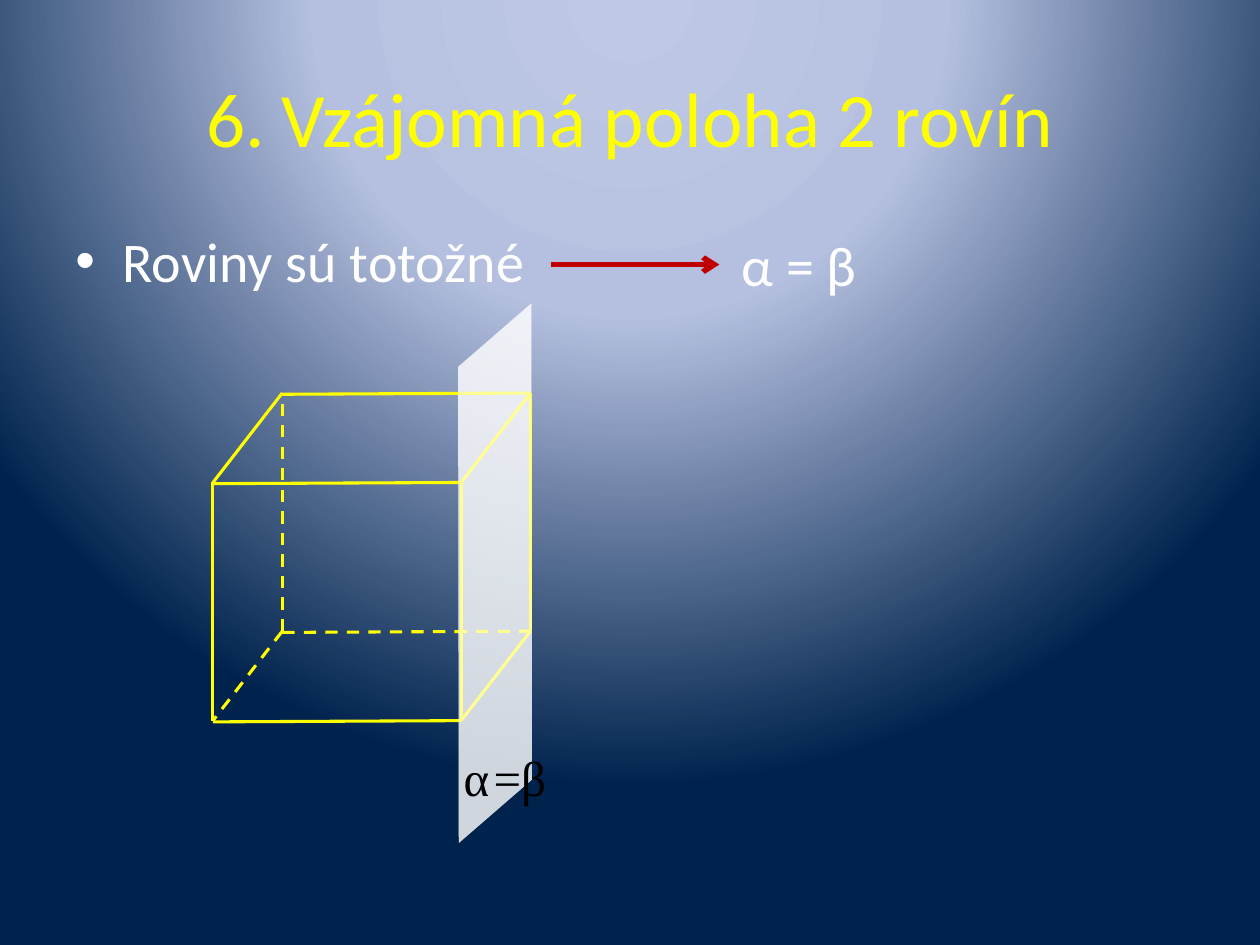
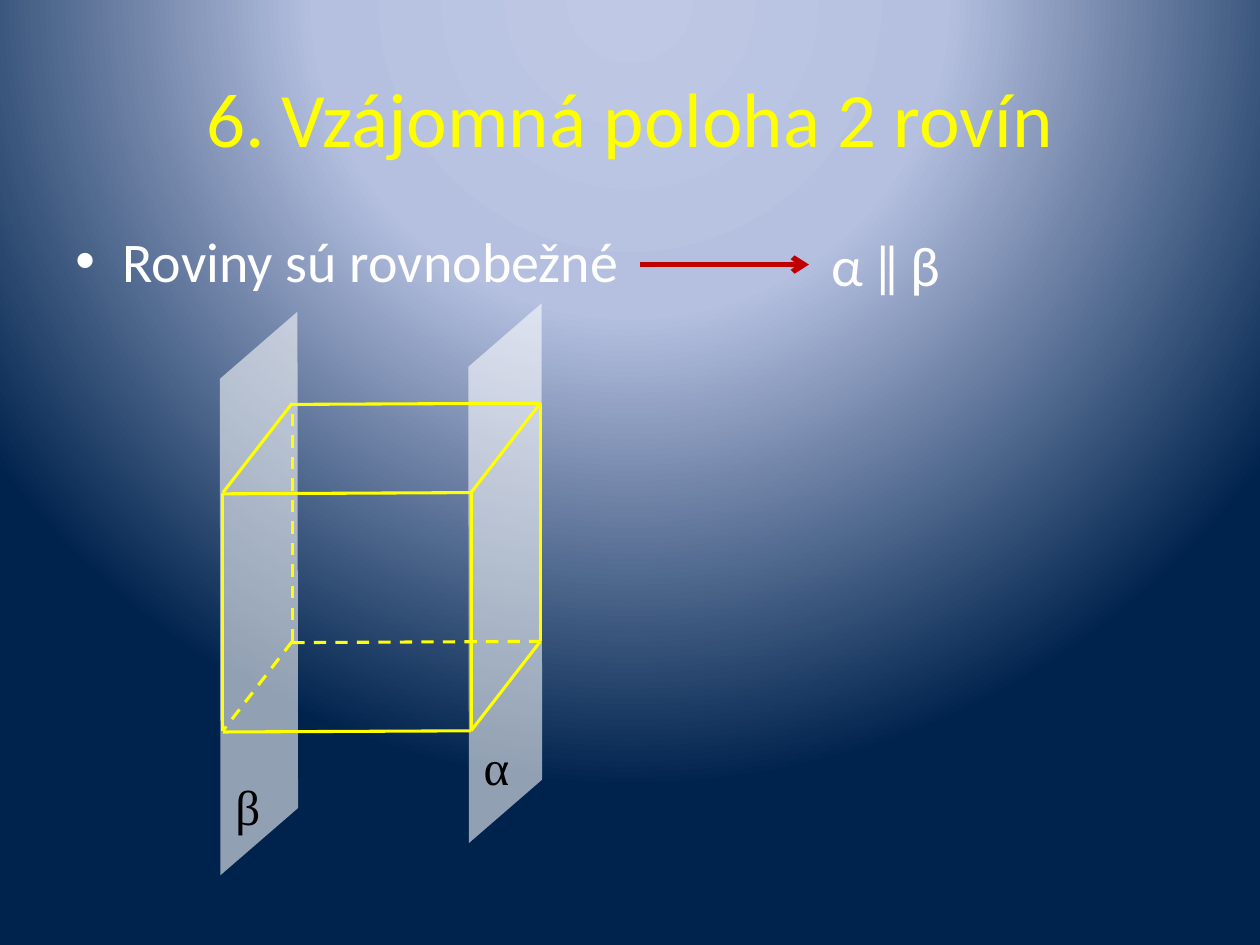
from lxml import etree
from pptx import Presentation
from pptx.dml.color import RGBColor
from pptx.enum import dml, shapes, text as t
from pptx.oxml.ns import qn
from pptx.util import Pt

YELLOW, WHITE, RED, BLACK = "FFFF00", "FFFFFF", "C00000", "000000"
rgb = RGBColor.from_string


def text(s, words, box, size=32, font="Calibri", color=WHITE, align=t.PP_ALIGN.LEFT,
         anchor=t.MSO_ANCHOR.TOP, wrap=True, bullet=False):
    tf = s.shapes.add_textbox(*map(Pt, box)).text_frame
    tf.word_wrap = wrap
    tf.vertical_anchor = anchor
    p = tf.paragraphs[0]
    p.alignment = align
    r = p.add_run()
    r.text = words
    r.font.size = Pt(size)
    r.font.name = font
    r.font.color.rgb = rgb(color)
    if bullet:
        pPr = p._p.get_or_add_pPr()
        pPr.set("marL", str(Pt(27)))
        pPr.set("indent", str(-Pt(27)))
        etree.SubElement(pPr, qn("a:buFont"), typeface="Arial")
        etree.SubElement(pPr, qn("a:buChar"), char="•")


def line(parent, start, end, color, width, dashed=False, arrow=False):
    c = parent.add_connector(shapes.MSO_CONNECTOR.STRAIGHT, *map(Pt, (*start, *end)))
    c.line.color.rgb = rgb(color)
    c.line.width = Pt(width)
    if dashed:
        c.line.dash_style = dml.MSO_LINE.DASH
    if arrow:
        etree.SubElement(next(c.element.iter(qn("a:ln"))), qn("a:tailEnd"), type="arrow")
    etree.SubElement(c.element.spPr, qn("a:effectLst"))


prs = Presentation()
prs.slide_width, prs.slide_height = Pt(720), Pt(540)

master = prs.slide_master
master.background.fill.gradient()
grad = next(master.element.cSld.iter(qn("a:gradFill")))
grad.clear()
stops = etree.SubElement(grad, qn("a:gsLst"))
for pos, color in ((0, "BFC9E5"), (40, "B5C0E0"), (100, "00234D")):
    gs = etree.SubElement(stops, qn("a:gs"), pos=str(pos * 1000))
    etree.SubElement(gs, qn("a:srgbClr"), val=color)
circle = etree.SubElement(grad, qn("a:path"), path="circle")
etree.SubElement(circle, qn("a:fillToRect"), l="50000", t="-80000", r="50000", b="180000")

SERIF = dict(size=28, font="Times New Roman", color=BLACK)
CUBE = "cube"
plane = (166.3, 224.6, 233.3, 205.9)
right_plane = (172.1, 224.6, 233.3, 205.9)
left_plane = (25.9, 231.8, 244.1, 214.6)

slides = [
    dict(statement="Roviny sú totožné", relation="α = β", arrow_x=314.6,
         cube=(121.7, 224.6), layers=[plane, CUBE, plane],
         labels=[("=β", (275, 423.4, 44.6, 41), False), ("α", (257.8, 423.4, 28.1, 41), True)]),
    dict(statement="Roviny sú rovnobežné", relation="α ‖ β", arrow_x=365.8,
         cube=(127.4, 230.4), layers=[right_plane, left_plane, CUBE],
         labels=[("α", (269.3, 417.6, 29.5, 41), False), ("β", (127.4, 439.9, 29.5, 41), False)]),
]

width, height, depth_x, depth_y, tilt = 141.8, 136.1, 39.6, 51.1, 0.7

for d in slides:
    s = prs.slides.add_slide(prs.slide_layouts[6])
    for layer in d["layers"]:
        if layer == CUBE:
            x, y = d["cube"]
            group = s.shapes.add_group_shape().shapes
            corners = {}
            for side, dx, dy in (("front", 0, depth_y), ("back", depth_x, 0)):
                for level, drop in (("top", 0), ("bottom", height)):
                    corners[side, level, "left"] = (x + dx, y + dy + drop)
                    corners[side, level, "right"] = (x + dx + width, y + dy + drop)
            for a in corners:
                for b in corners:
                    if a < b and sum(i != j for i, j in zip(a, b)) == 1:
                        (ax, ay), (bx, by) = corners[a], corners[b]
                        if a[2] != b[2]:
                            ay += tilt
                        hidden = ("back", "bottom", "left") in (a, b)
                        line(group, (ax, ay), (bx, by), YELLOW, 1.75, dashed=hidden)
        else:
            sp = s.shapes.add_shape(shapes.MSO_SHAPE.PARALLELOGRAM, *map(Pt, layer))
            sp.adjustments[0] = 0.864
            sp.rotation = 319.1
            sp.shadow.inherit = False
            sp.fill.solid()
            sp.fill.fore_color.rgb = rgb(WHITE)
            etree.SubElement(next(sp.element.spPr.iter(qn("a:srgbClr"))), qn("a:alpha"), val="57000")
            sp.line.fill.background()

    text(s, "6. Vzájomná poloha 2 rovín", (36, 21.6, 648, 90), size=44, color=YELLOW,
         align=t.PP_ALIGN.CENTER, anchor=t.MSO_ANCHOR.MIDDLE)
    text(s, d["statement"], (36, 126, 648, 356.4), bullet=True)
    arrow_x = d["arrow_x"]
    line(s.shapes, (arrow_x, 151.2), (arrow_x + 96.5, 151.2), RED, 3, arrow=True)
    text(s, d["relation"], (arrow_x + 102.3, 128.2, 115, 46))
    for words, box, wrap in d["labels"]:
        text(s, words, box, wrap=wrap, **SERIF)

prs.save("out.pptx")
